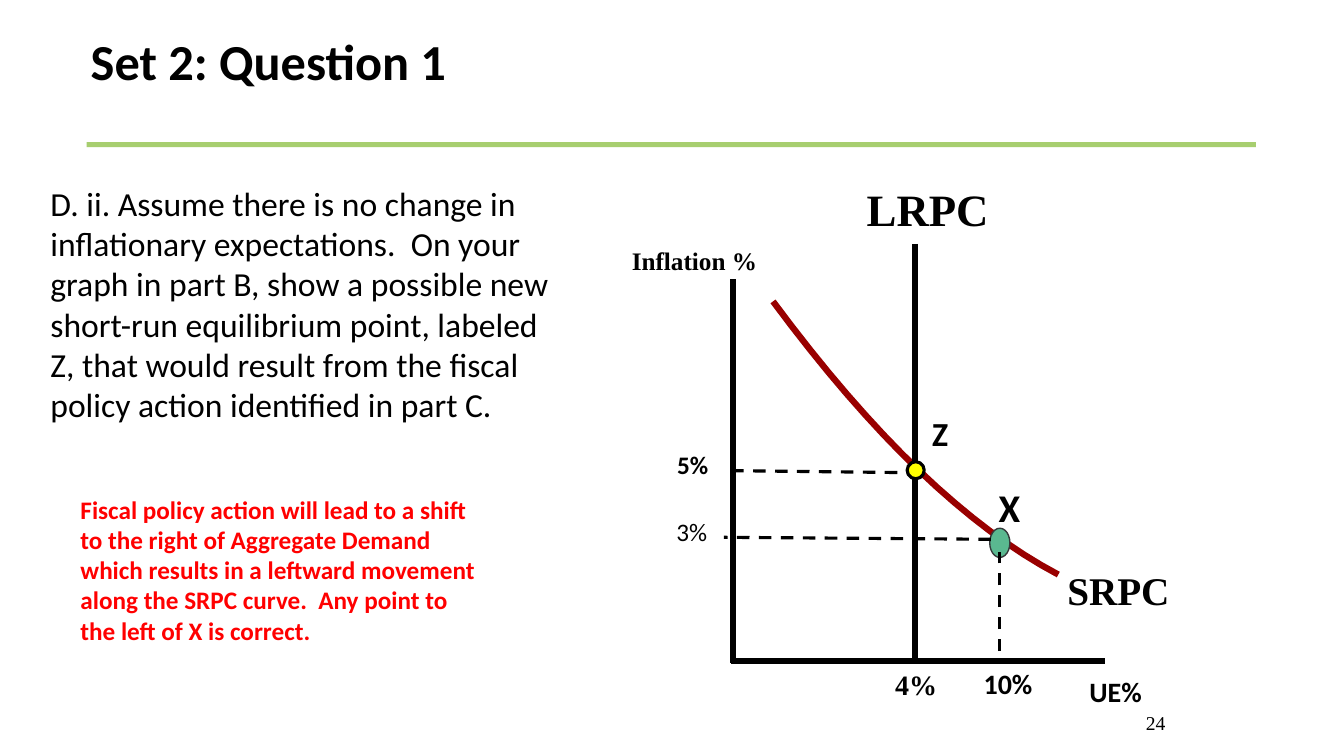
from dataclasses import dataclass

from lxml import etree
from pptx import Presentation
from pptx.dml.color import RGBColor
from pptx.enum.dml import MSO_LINE
from pptx.enum.shapes import MSO_CONNECTOR, MSO_SHAPE
from pptx.enum.text import MSO_ANCHOR, MSO_AUTO_SIZE, PP_ALIGN
from pptx.oxml.ns import qn
from pptx.util import Pt

DASH = MSO_LINE.DASH
STRAIGHT = MSO_CONNECTOR.STRAIGHT
OVAL, BAR = MSO_SHAPE.OVAL, MSO_SHAPE.RECTANGLE
TOP, MIDDLE = MSO_ANCHOR.TOP, MSO_ANCHOR.MIDDLE
LEFT, RIGHT = PP_ALIGN.LEFT, PP_ALIGN.RIGHT
FIXED = MSO_AUTO_SIZE.NONE


# Colours, fonts and type sizes
@dataclass(frozen=True)
class Theme:
    black: str = "000000"
    red: str = "FF0000"
    green: str = "A7CE6F"
    curve: str = "990000"
    yellow: str = "FFFF00"
    teal: str = "5AB890"
    edge: str = "36393B"
    sans: str = "Calibri"
    serif: str = "Times New Roman"
    title: float = 36
    large: float = 32
    name: float = 28
    body: float = 24
    tick: float = 20
    note: float = 18
    small: float = 14


THEME = Theme()


@dataclass
class Label:
    text: str
    box: tuple[float, float, float, float]
    size: float
    face: str = THEME.sans
    bold: bool = True
    color: str = THEME.black
    align: PP_ALIGN = LEFT
    anchor: MSO_ANCHOR = TOP


@dataclass
class Line:
    start: tuple[float, float]
    end: tuple[float, float]
    width: float = 2.25
    dash: bool = True


@dataclass
class Solid:
    kind: MSO_SHAPE
    box: tuple[float, float, float, float]
    fill: str
    edge: str = ""
    width: float = 0


TITLE = Label("Set 2: Question 1", (57.6, 18, 408.2, 51.1), THEME.title)
BODY = Label(
    "D. ii. Assume there is no change in inflationary expectations.  On your "
    "graph in part B, show a possible new short-run equilibrium point, labeled "
    "Z, that would result from the fiscal policy action identified in part C.",
    (28.8, 126.7, 375.8, 181.4), THEME.body, bold=False)

LABELS = [
    Label("24", (689.8, 504, 149.8, 36), THEME.small, THEME.serif, False, align=RIGHT),
    Label("Inflation %", (444.2, 165.6, 138.2, 41), THEME.note, THEME.serif, anchor=MIDDLE),
    Label("SRPC", (755.3, 401, 105.1, 41), THEME.name, THEME.serif),
    Label("4%", (632.2, 473, 90, 31), THEME.tick, THEME.serif),
    Label("LRPC", (612, 126, 144, 45.4), THEME.large, THEME.serif),
    Label("UE%", (771.1, 478.1, 99.4, 31.7), THEME.tick),
    Label("10%", (695.5, 472.3, 54, 31.7), THEME.tick),
    Label("5%", (476.5, 317.5, 46, 28.8), THEME.note),
    Label("3%", (476, 365, 45.4, 28.8), THEME.note, bold=False),
    Label("X", (706.3, 342, 26.6, 41), THEME.name),
    Label("Z", (658.8, 291.6, 37.4, 36), THEME.body),
    Label("Fiscal policy action will lead to a shift to the right of Aggregate "
          "Demand which results in a leftward movement along the SRPC curve.  "
          "Any point to the left of X is correct.",
          (50.4, 349.2, 303.1, 116.6), THEME.note, color=THEME.red),
]

RULE = Solid(BAR, (61.9, 101.5, 835.2, 3.6), THEME.green)
DOTS = [
    Solid(OVAL, (648, 329.8, 12.2, 12.2), THEME.yellow, THEME.black, 2.25),
    Solid(OVAL, (707, 377.3, 14.4, 20.9), THEME.teal, THEME.edge, 1),
]
AXES = [
    Line((523.4, 199.4), (523.4, 473.8), 4, False),
    Line((522, 472.3), (789.1, 472.3), 4, False),
]
LONG = Line((653.8, 174.2), (653.8, 473.8), 4.5, False)
ZLINE = Line((656.6, 337.7), (522, 336.2))
XLINES = [
    Line((714.2, 465.1), (714.2, 394.6)),
    Line((707.8, 385.2), (517, 383.8)),
]
# Start, control and end of the short-run curve
BEND = ((552.2, 215.3), (659.2, 359.6), (756, 410.4))
STEPS = 16


def shade(text: str) -> RGBColor:
    return RGBColor.from_string(text)


def put(shape, label: Label) -> None:
    """Place a text shape and format its words."""
    for side, value in zip(("left", "top", "width", "height"), label.box):
        setattr(shape, side, Pt(value))
    frame = shape.text_frame
    frame.text = label.text
    para = frame.paragraphs[0]
    props = para._p.get_or_add_pPr()
    props.set("marL", "0")
    props.set("indent", "0")
    etree.SubElement(props, qn("a:buNone"))
    style = {
        frame: {"word_wrap": True, "auto_size": FIXED, "vertical_anchor": label.anchor},
        para: {"alignment": label.align, "space_before": Pt(0)},
        para.runs[0].font: {"name": label.face, "size": Pt(label.size), "bold": label.bold},
    }
    for part, values in style.items():
        for key, value in values.items():
            setattr(part, key, value)
    para.runs[0].font.color.rgb = shade(label.color)


def rule(shapes, line: Line) -> None:
    ends = [Pt(value) for value in line.start + line.end]
    link = shapes.add_connector(STRAIGHT, *ends)
    link.line.color.rgb = shade(THEME.black)
    link.line.width = Pt(line.width)
    if line.dash:
        link.line.dash_style = DASH
    etree.SubElement(link._element.spPr, qn("a:effectLst"))


def block(shapes, solid: Solid) -> None:
    shape = shapes.add_shape(solid.kind, *[Pt(value) for value in solid.box])
    shape.shadow.inherit = False
    shape.fill.solid()
    shape.fill.fore_color.rgb = shade(solid.fill)
    if solid.edge:
        shape.line.color.rgb = shade(solid.edge)
        shape.line.width = Pt(solid.width)
    else:
        shape.line.fill.background()


def curve(shapes) -> None:
    """Trace the quadratic bend in short steps."""
    points = []
    for step in range(STEPS + 1):
        t = step / STEPS
        points.append(tuple(
            Pt((1 - t) ** 2 * a + 2 * t * (1 - t) * b + t * t * c)
            for a, b, c in zip(*BEND)))
    pen = shapes.build_freeform(*points[0])
    pen.add_line_segments(points[1:], close=False)
    shape = pen.convert_to_shape()
    shape.shadow.inherit = False
    shape.fill.background()
    shape.line.color.rgb = shade(THEME.curve)
    shape.line.width = Pt(4.5)


def main() -> None:
    deck = Presentation()
    deck.slide_width, deck.slide_height = Pt(960), Pt(540)
    slide = deck.slides.add_slide(deck.slide_layouts[1])
    shapes = slide.shapes

    # Title, question and rule
    put(shapes.title, TITLE)
    put(slide.placeholders[1], BODY)
    block(shapes, RULE)

    # Graph, from back to front
    for line in AXES:
        rule(shapes, line)
    curve(shapes)
    for line in (LONG, ZLINE):
        rule(shapes, line)
    for dot in DOTS:
        block(shapes, dot)
    for line in XLINES:
        rule(shapes, line)

    # Labels, note and slide number
    for label in LABELS:
        put(shapes.add_textbox(0, 0, 0, 0), label)
    deck.save("out.pptx")


if __name__ == "__main__":
    main()
